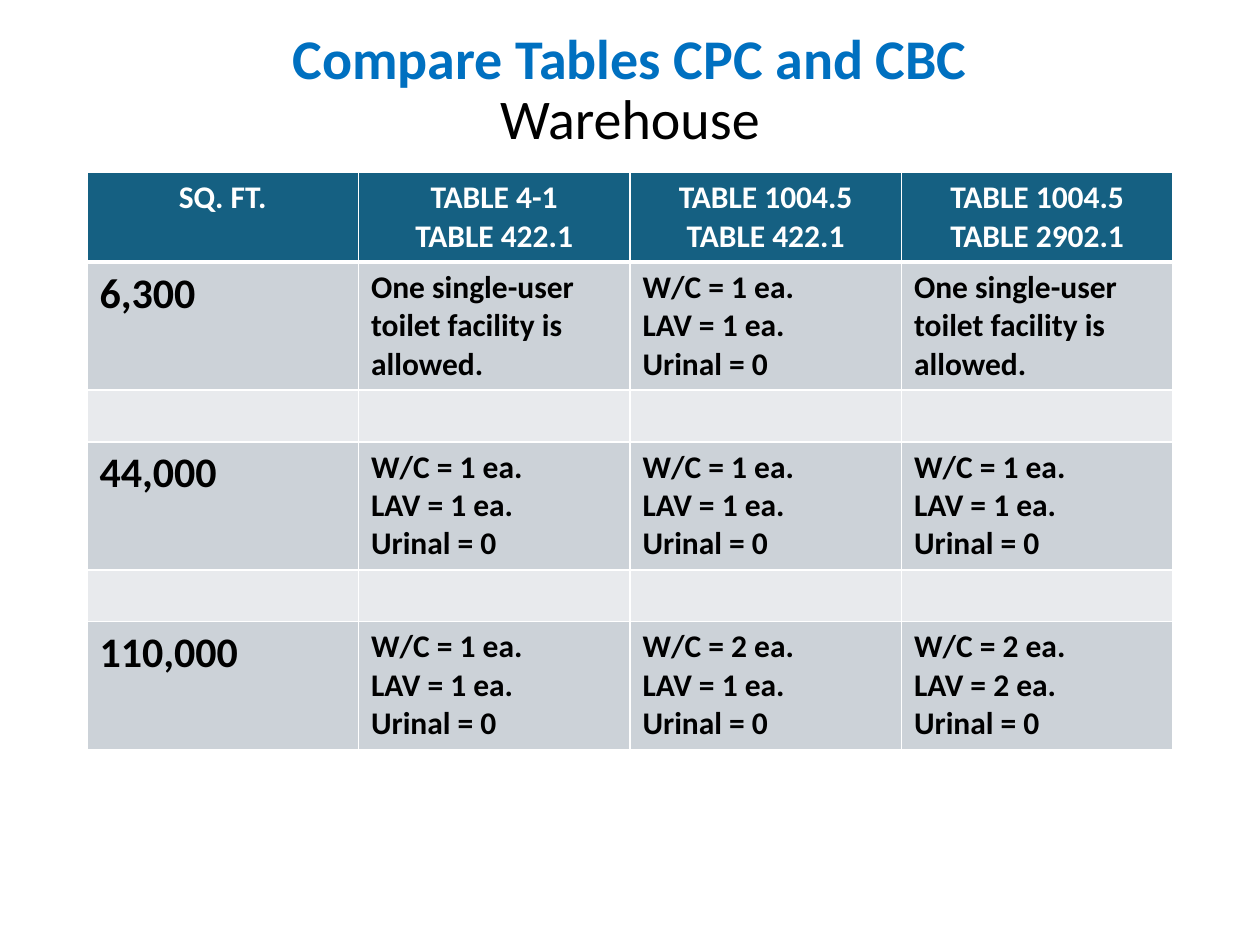
import pptx
import pptx.dml.color
import pptx.enum.text
import pptx.oxml
import pptx.oxml.ns
import pptx.util
from pptx.util import Inches

# Content
TITLE = ("Compare Tables CPC and CBC", "Warehouse")
HEADER = ("SQ. FT.", "TABLE 4-1\nTABLE 422.1",
          "TABLE 1004.5\nTABLE 422.1", "TABLE 1004.5\nTABLE 2902.1")
SINGLE_USER = "One single-user toilet facility is allowed."


def fixtures(wc, lav):
    return f"W/C = {wc} ea.\nLAV = {lav} ea.\nUrinal = 0"


WAREHOUSES = (
    ("6,300", SINGLE_USER, fixtures(1, 1), SINGLE_USER),
    ("44,000", fixtures(1, 1), fixtures(1, 1), fixtures(1, 1)),
    ("110,000", fixtures(1, 1), fixtures(2, 1), fixtures(2, 2)),
)

# Theme and layout
THEME = {
    "font": "Calibri", "title_size": 32, "area_size": 24, "cell_size": 18,
    "accent": "0070C0", "text": "000000", "header_text": "FFFFFF",
    "header": "156082", "band": "CCD2D8", "gap": "E8EAED",
    "border": "FFFFFF", "thin": 1, "thick": 3,
}
LEFT, WIDTH = 0.69, 8.62
TABLE_TOP = 1.37
HEIGHTS = {"header": 0.7, "band": 1.01, "gap": 0.41}
CENTER = pptx.enum.text.PP_ALIGN.CENTER


def set_font(font, size, color, bold=True):
    values = {"name": THEME["font"], "size": pptx.util.Pt(size), "bold": bold}
    for name, value in values.items():
        setattr(font, name, value)
    font.color.rgb = pptx.dml.color.RGBColor.from_string(THEME[color])


def set_borders(cell, top, bottom):
    tc_pr = cell._tc.get_or_add_tcPr()
    widths = {"L": THEME["thin"], "R": THEME["thin"], "T": top, "B": bottom}
    for side, width in widths.items():
        tc_pr.append(pptx.oxml.parse_xml(
            f'<a:ln{side} {pptx.oxml.ns.nsdecls("a")} w="{pptx.util.Pt(width)}">'
            f'<a:solidFill><a:srgbClr val="{THEME["border"]}"/></a:solidFill>'
            f'</a:ln{side}>'))


def fill_cell(cell, text, kind, size):
    cell.fill.solid()
    cell.fill.fore_color.rgb = pptx.dml.color.RGBColor.from_string(THEME[kind])
    cell.text = text
    for p in cell.text_frame.paragraphs:
        p.alignment = CENTER if kind == "header" else None
        color = "header_text" if kind == "header" else "text"
        set_font(p.font, size, color)
        for r in p.runs:
            set_font(r.font, size, color)


def add_title(s):
    sp = s.shapes.title
    box = {"left": LEFT, "top": 0, "width": WIDTH, "height": 1.45}
    for name, value in box.items():
        setattr(sp, name, Inches(value))
    tf = sp.text_frame
    tf.word_wrap = True
    tf.auto_size = pptx.enum.text.MSO_AUTO_SIZE.NONE
    tf.vertical_anchor = pptx.enum.text.MSO_ANCHOR.MIDDLE
    p = tf.paragraphs[0]
    p.alignment, p.line_spacing = CENTER, 0.9
    r = p.add_run()
    r.text = TITLE[0]
    set_font(r.font, THEME["title_size"], "accent")
    p.add_line_break()
    r = p.add_run()
    r.text = TITLE[1]
    set_font(r.font, THEME["title_size"], "text", bold=False)


def add_comparison(s):
    # A blank gap row separates neighbouring warehouses
    rows = [("header", HEADER)]
    for i, warehouse in enumerate(WAREHOUSES):
        if i:
            rows.append(("gap", ("",) * len(HEADER)))
        rows.append(("band", warehouse))
    height = sum(HEIGHTS[kind] for kind, _ in rows)
    table = s.shapes.add_table(len(rows), len(HEADER), Inches(LEFT), Inches(TABLE_TOP),
                               Inches(WIDTH), Inches(height)).table
    for i, (kind, texts) in enumerate(rows):
        table.rows[i].height = Inches(HEIGHTS[kind])
        for j, text in enumerate(texts):
            cell = table.cell(i, j)
            set_borders(cell, THEME["thick" if i == 1 else "thin"],
                        THEME["thick" if i == 0 else "thin"])
            is_area = kind == "band" and j == 0
            fill_cell(cell, text, kind, THEME["area_size" if is_area else "cell_size"])


def main():
    prs = pptx.Presentation()
    prs.slide_width, prs.slide_height = Inches(10), Inches(7.5)
    s = prs.slides.add_slide(prs.slide_layouts[5])
    add_title(s)
    add_comparison(s)
    prs.save("out.pptx")


if __name__ == "__main__":
    main()
